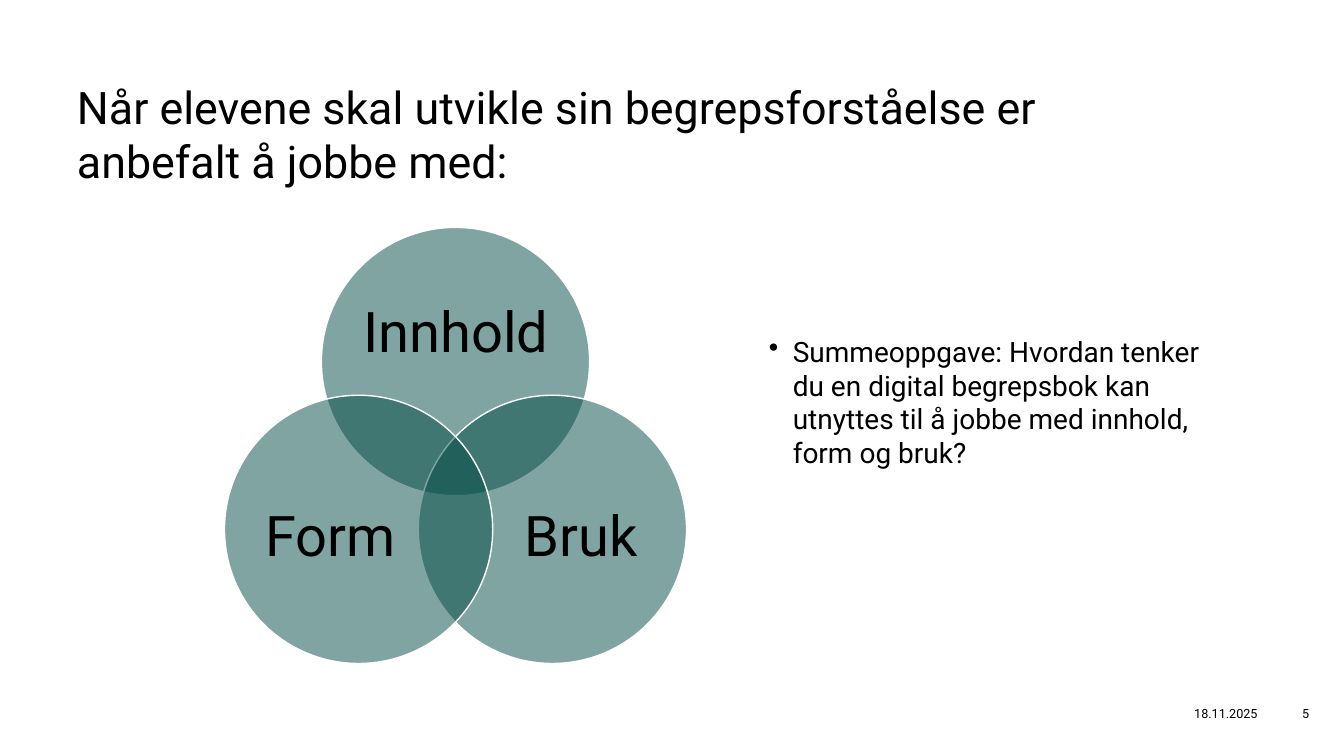
from math import cos, radians, sin

from lxml.etree import SubElement
from pptx import Presentation
from pptx.dml.color import RGBColor
from pptx.enum.shapes import MSO_SHAPE as Shape
from pptx.enum.text import MSO_ANCHOR as Anchor, PP_ALIGN as Align
from pptx.oxml.ns import qn
from pptx.util import Cm, Pt

BLACK = RGBColor(0x00, 0x00, 0x00)
WHITE = RGBColor(0xFF, 0xFF, 0xFF)
GREEN = RGBColor(0x03, 0x4B, 0x45)


class SlideBuilder:
    """Draws styled elements on the current slide."""

    font = "Roboto"
    padding = (0.25, 0.13)

    def __init__(self, page):
        self.page = page

    def text(self, words, area, size, align=Align.LEFT, anchor=Anchor.TOP,
             padding=(0, 0), parent=None):
        shapes = (parent or self.page).shapes
        box = shapes.add_textbox(*map(Cm, area))
        frame = box.text_frame
        frame.word_wrap = True
        frame.vertical_anchor = anchor
        frame.margin_left = frame.margin_right = Cm(padding[0])
        frame.margin_top = frame.margin_bottom = Cm(padding[1])
        para = frame.paragraphs[0]
        para.text = words
        para.alignment = align
        para.font.name = self.font
        para.font.size = Pt(size)
        para.font.color.rgb = BLACK
        return para

    def bullet(self, words, area, size, indent):
        para = self.text(words, area, size)
        properties = para._p.get_or_add_pPr()
        properties.set("marL", str(Cm(indent)))
        properties.set("indent", str(-Cm(indent)))
        mark = properties.makeelement(qn("a:buChar"), {"char": "•"})
        properties.insert(0, mark)

    def footer(self, words, area, align):
        self.text(words, area, 9, align, Anchor.MIDDLE, self.padding)

    def circle(self, group, center_x, center_y, diameter):
        left, top = center_x - diameter / 2, center_y - diameter / 2
        circle = group.shapes.add_shape(
            Shape.OVAL, Cm(left), Cm(top), Cm(diameter), Cm(diameter))
        circle.shadow.inherit = False
        circle.fill.solid()
        circle.fill.fore_color.rgb = GREEN
        color = circle.fill._xPr.find(qn("a:solidFill"))[0]
        SubElement(color, qn("a:alpha"), val="50000")
        circle.line.color.rgb = WHITE
        circle.line.width = Pt(1)

    def venn(self, center, radius, diameter, labels):
        group = self.page.shapes.add_group_shape()
        for index, (words, area) in enumerate(labels):
            angle = radians(120 * index - 90)
            self.circle(group, center[0] + radius * cos(angle),
                        center[1] + radius * sin(angle), diameter)
            para = self.text(words, area, 40, Align.CENTER, Anchor.MIDDLE,
                             parent=group)
            para.line_spacing = 0.9


def main():
    deck = Presentation()
    deck.slide_width, deck.slide_height = Cm(33.87), Cm(19.05)
    builder = SlideBuilder(deck.slides.add_slide(deck.slide_layouts[6]))

    builder.text("Når elevene skal utvikle sin begrepsforståelse er "
                 "anbefalt å jobbe med:", (1.94, 2.01, 26.31, 3.63), 32)
    builder.footer("18.11.2025", (28.21, 17.48, 3.73, 1.02), Align.RIGHT)
    builder.footer("5", (31.94, 17.48, 1.93, 1.02), Align.CENTER)
    builder.bullet("Summeoppgave: Hvordan tenker du en digital begrepsbok kan "
                   "utnyttes til å jobbe med innhold, form og bruk?",
                   (19.38, 8.43, 11.46, 4.62), 20, 0.6)
    builder.venn((11.48, 11.93), 2.82, 6.76, [
        ("Innhold", (9.02, 6.91, 4.95, 3.05)),
        ("Bruk", (12.62, 11.71, 4.06, 3.73)),
        ("Form", (6.3, 11.71, 4.06, 3.73)),
    ])
    deck.save("out.pptx")


if __name__ == "__main__":
    main()
